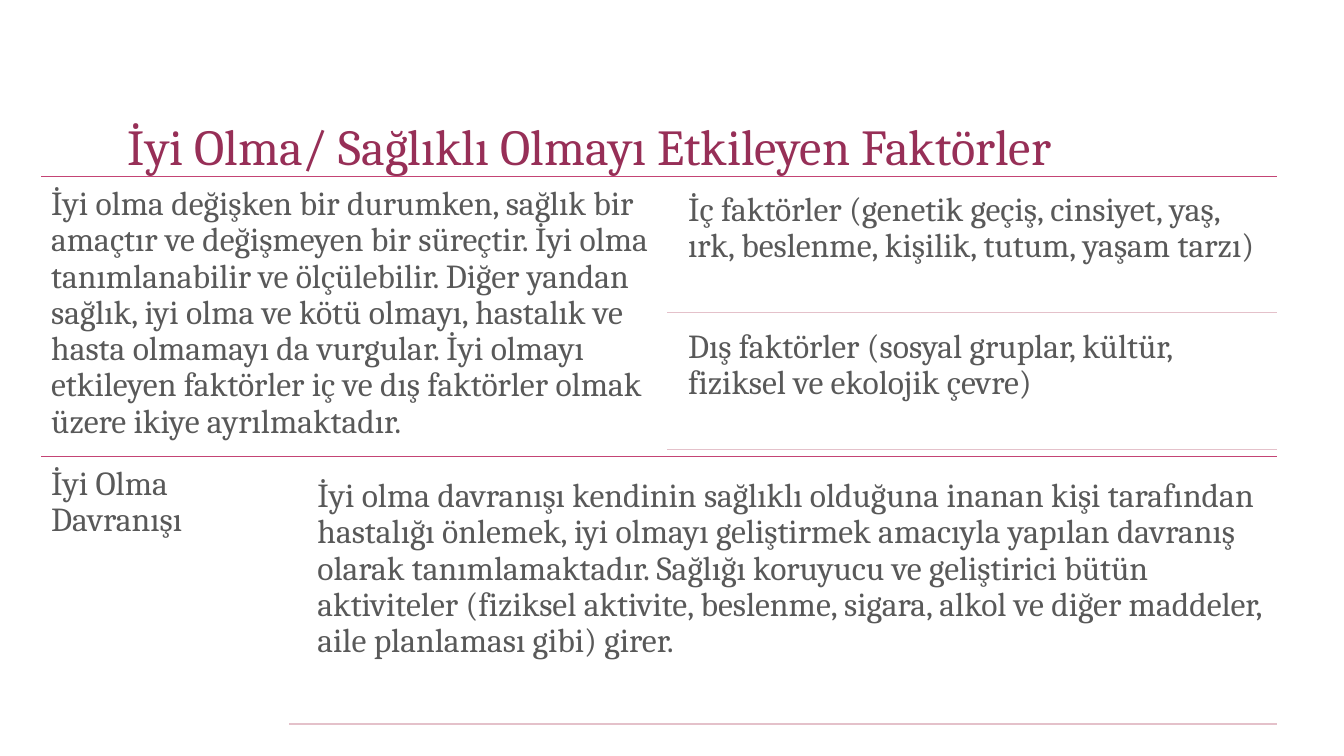
from dataclasses import dataclass

from lxml import etree
from pptx import Presentation
from pptx import util as u
from pptx.dml.color import RGBColor
from pptx.enum import shapes, text
from pptx.oxml.ns import qn


@dataclass(frozen=True)
class Theme:
    font: str = "Cambria"
    title_color: str = "972F57"
    body_color: str = "595959"
    section_rule: str = "C44475"
    item_rule: str = "E4C1CA"
    title_size: int = 36
    body_size: int = 24
    rule_width: int = 1
    line_spacing: float = 0.9


class SlideBuilder:
    def __init__(self, s, theme):
        self.s = s
        self.theme = theme

    def add_text(self, words, x, y, w, h, size, color, inset_y, anchor):
        sp = self.s.shapes.add_textbox(u.Cm(x), u.Cm(y), u.Cm(w), u.Cm(h))
        tf = sp.text_frame
        tf.word_wrap = True
        tf.auto_size = text.MSO_AUTO_SIZE.NONE
        tf.vertical_anchor = anchor
        tf.margin_left = tf.margin_right = u.Cm(0.25)
        tf.margin_top = tf.margin_bottom = u.Cm(inset_y)
        p = tf.paragraphs[0]
        p.line_spacing = self.theme.line_spacing
        r = p.add_run()
        r.text = words
        r.font.name = self.theme.font
        r.font.size = u.Pt(size)
        r.font.color.rgb = RGBColor.from_string(color)

    def title(self, words, x, y, w, h):
        self.add_text(words, x, y, w, h, self.theme.title_size,
                      self.theme.title_color, 0.13, text.MSO_ANCHOR.BOTTOM)

    def body(self, words, x, y, w, h):
        self.add_text(words, x, y, w, h, self.theme.body_size,
                      self.theme.body_color, 0.25, text.MSO_ANCHOR.TOP)

    def rule(self, x1, x2, y, color):
        c = self.s.shapes.add_connector(
            shapes.MSO_CONNECTOR.STRAIGHT, u.Cm(x1), u.Cm(y), u.Cm(x2), u.Cm(y))
        c.line.color.rgb = RGBColor.from_string(color)
        c.line.width = u.Pt(self.theme.rule_width)
        etree.SubElement(c.line._get_or_add_ln().getparent(), qn("a:effectLst"))


LEFT, RIGHT = 1.04, 32.18
SECTION_TOP, SECTION_H = 4.45, 7.06
FACTOR_TOP, FACTOR_STEP, FACTOR_H = 4.6, 3.45, 3.28

# Left column of each section: text and width
SECTIONS = [
    ("İyi olma değişken bir durumken, sağlık bir amaçtır ve değişmeyen bir "
     "süreçtir. İyi olma tanımlanabilir ve ölçülebilir. Diğer yandan sağlık, "
     "iyi olma ve kötü olmayı, hastalık ve hasta olmamayı da vurgular. İyi "
     "olmayı etkileyen faktörler iç ve dış faktörler olmak üzere ikiye "
     "ayrılmaktadır.", 15.75),
    ("İyi Olma Davranışı", 6.22),
]
FACTORS = [
    "İç faktörler (genetik geçiş, cinsiyet, yaş, ırk, beslenme, kişilik, "
    "tutum, yaşam tarzı)",
    "Dış faktörler (sosyal gruplar, kültür, fiziksel ve ekolojik çevre)",
]
BEHAVIOUR = (
    "İyi olma davranışı kendinin sağlıklı olduğuna inanan kişi tarafından "
    "hastalığı önlemek, iyi olmayı geliştirmek amacıyla yapılan davranış olarak "
    "tanımlamaktadır. Sağlığı koruyucu ve geliştirici bütün aktiviteler "
    "(fiziksel aktivite, beslenme, sigara, alkol ve diğer maddeler, aile "
    "planlaması gibi) girer.")


def main():
    prs = Presentation()
    prs.slide_width, prs.slide_height = u.Cm(33.87), u.Cm(19.05)
    theme = Theme()
    b = SlideBuilder(prs.slides.add_slide(prs.slide_layouts[6]), theme)

    # Title
    b.title("İyi Olma/ Sağlıklı Olmayı Etkileyen Faktörler",
            2.97, 1.27, 27.94, 3.3)

    # Sections with a rule above each
    for i, (words, width) in enumerate(SECTIONS):
        y = SECTION_TOP + i * SECTION_H
        b.rule(LEFT, RIGHT, y, theme.section_rule)
        b.body(words, LEFT, y, width, SECTION_H)

    # Factors with a rule below each
    for i, words in enumerate(FACTORS):
        y = FACTOR_TOP + i * FACTOR_STEP
        b.body(words, 17.09, y, 15.06, FACTOR_H)
        b.rule(16.81, RIGHT, y + FACTOR_H, theme.item_rule)

    # Behaviour description
    b.body(BEHAVIOUR, 7.75, 11.81, 24.43, 6.4)
    b.rule(7.29, RIGHT, 18.24, theme.item_rule)

    prs.save("out.pptx")


if __name__ == "__main__":
    main()
